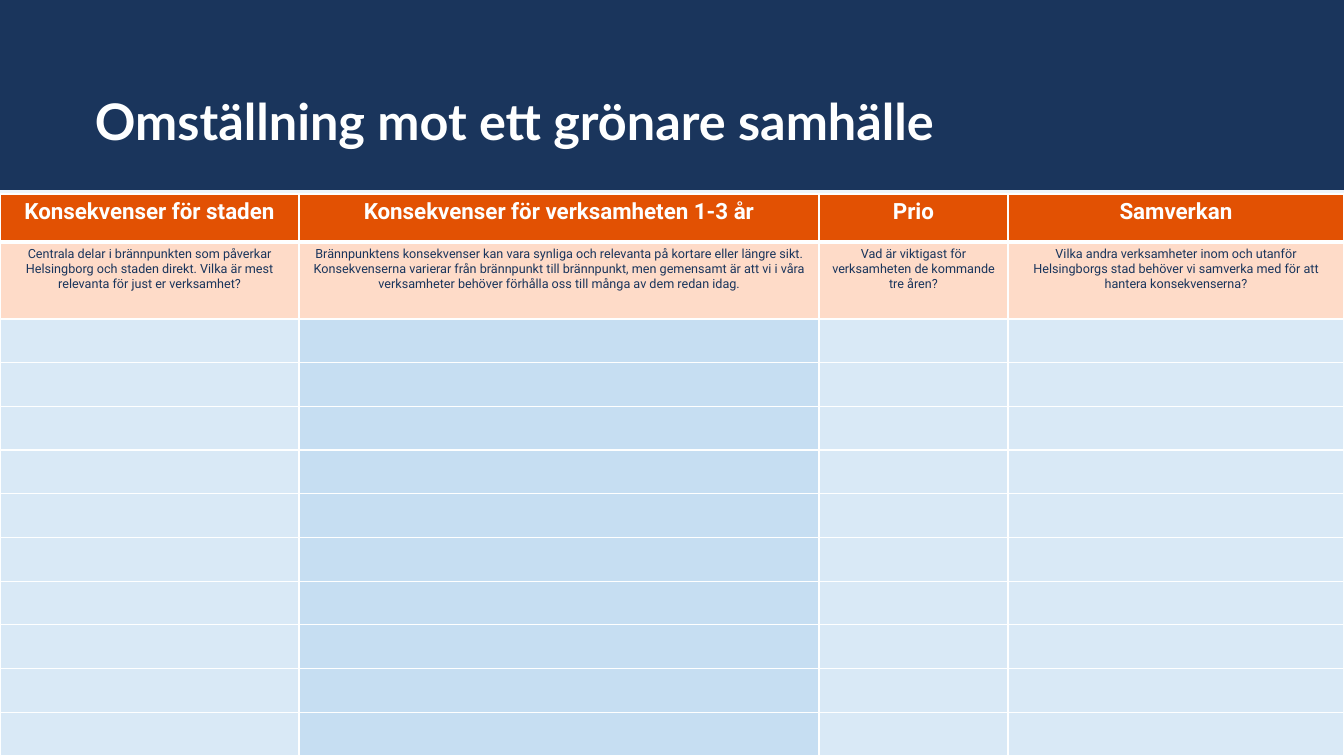
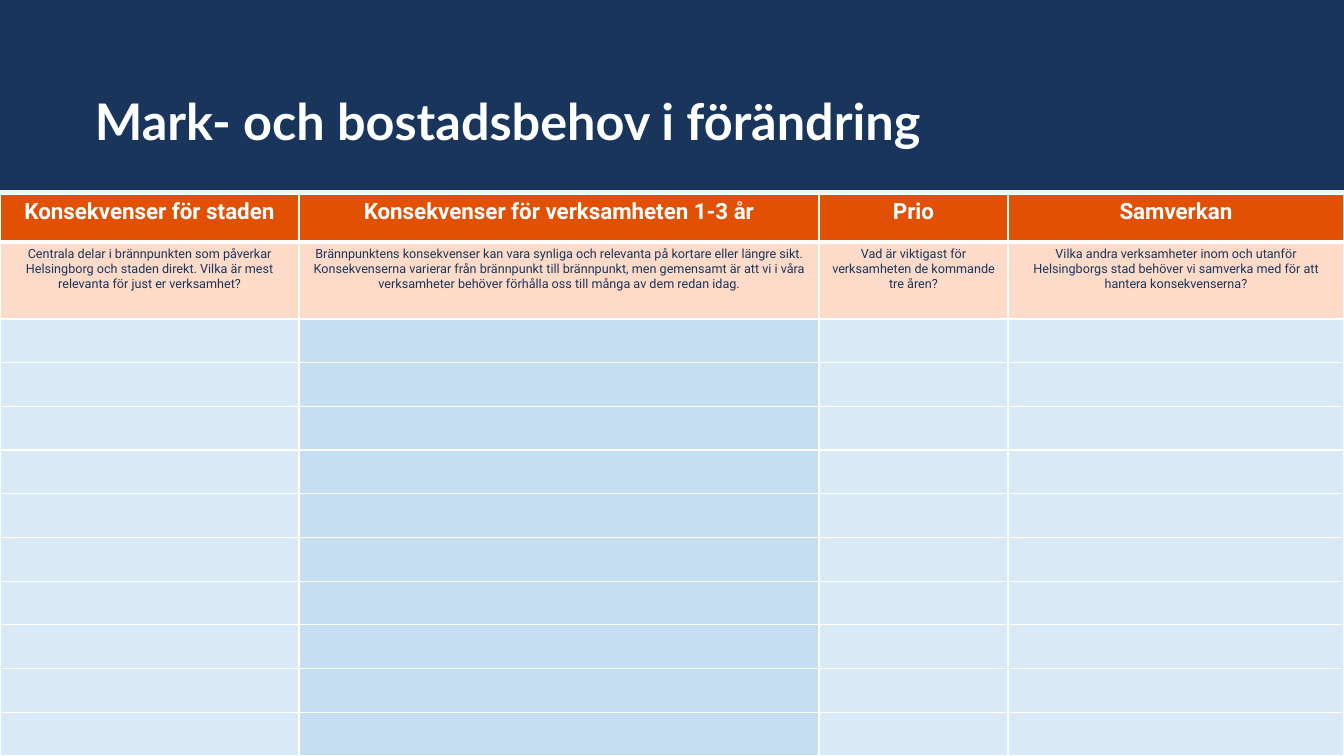
from lxml.etree import SubElement
from pptx import Presentation
from pptx.dml.color import RGBColor
from pptx.enum.shapes import MSO_SHAPE
from pptx.enum.text import MSO_ANCHOR, PP_ALIGN
from pptx.oxml.ns import qn
from pptx.util import Emu, Pt

WIDTH, HEIGHT = 1344, 756
SCALE = 12192000 / WIDTH
COLORS = {
    "background": "EEF5FB",
    "navy": "1A355C",
    "white": "FEFFFF",
    "orange": "E25103",
    "peach": "FEDBC8",
    "blue": "C6DEF2",
}
TITLES = ["Omställning mot ett grönare samhälle", "Mark- och bostadsbehov i förändring"]
# Column width, heading, guiding question
COLUMNS = [
    (299, "Konsekvenser för staden",
     "Centrala delar i brännpunkten som påverkar Helsingborg och staden direkt. "
     "Vilka är mest relevanta för just er verksamhet?"),
    (520, "Konsekvenser för verksamheten 1-3 år",
     "Brännpunktens konsekvenser kan vara synliga och relevanta på kortare eller längre sikt. "
     "Konsekvenserna varierar från brännpunkt till brännpunkt, men gemensamt är att vi i våra "
     "verksamheter behöver förhålla oss till många av dem redan idag."),
    (189, "Prio", "Vad är viktigast för verksamheten de kommande tre åren?"),
    (336, "Samverkan",
     "Vilka andra verksamheter inom och utanför Helsingborgs stad behöver vi samverka med "
     "för att hantera konsekvenserna?"),
]
TABLE_TOP, HEADING_HEIGHT, QUESTION_HEIGHT, ANSWER_ROWS = 194, 48, 77, 10
EMPHASIZED_COLUMN = 1
answer_height = (HEIGHT - TABLE_TOP - HEADING_HEIGHT - QUESTION_HEIGHT) / ANSWER_ROWS
row_heights = [HEADING_HEIGHT, QUESTION_HEIGHT] + [answer_height] * ANSWER_ROWS


def px(length):
    return Emu(round(length * SCALE))


def style_cell(cell, fill, top, bottom, alpha=None):
    """Give a cell white borders (top and bottom widths in points) and a fill."""
    properties = cell._tc.get_or_add_tcPr()
    for side, width in (("L", 1), ("R", 1), ("T", top), ("B", bottom)):
        line = SubElement(properties, qn(f"a:ln{side}"), w=str(Pt(width)))
        SubElement(SubElement(line, qn("a:solidFill")), qn("a:srgbClr"), val=COLORS["white"])
    cell.fill.solid()
    cell.fill.fore_color.rgb = RGBColor.from_string(COLORS[fill])
    if alpha:
        color = properties.find(qn("a:solidFill")).find(qn("a:srgbClr"))
        SubElement(color, qn("a:alpha"), val=str(alpha * 1000))


prs = Presentation()
prs.slide_width, prs.slide_height = px(WIDTH), px(HEIGHT)
background = prs.slide_master.background.fill
background.solid()
background.fore_color.rgb = RGBColor.from_string(COLORS["background"])

for title in TITLES:
    slide = prs.slides.add_slide(prs.slide_layouts[6])

    band = slide.shapes.add_shape(MSO_SHAPE.RECTANGLE, 0, 0, px(WIDTH), px(190))
    band.shadow.inherit = False
    band.fill.solid()
    band.fill.fore_color.rgb = RGBColor.from_string(COLORS["navy"])
    band.line.fill.background()

    heading = slide.shapes.add_textbox(px(95), px(24), px(1008), px(127)).text_frame
    heading.word_wrap = True
    heading.vertical_anchor = MSO_ANCHOR.BOTTOM
    heading.margin_left = heading.margin_right = heading.margin_top = heading.margin_bottom = 0
    heading.text = title
    paragraph = heading.paragraphs[0]
    paragraph.line_spacing = 0.9
    paragraph.font.name, paragraph.font.size, paragraph.font.bold = "Lato", Pt(36), True
    paragraph.font.color.rgb = RGBColor.from_string(COLORS["white"])

    worksheet = slide.shapes.add_table(
        len(row_heights), len(COLUMNS), 0, px(TABLE_TOP), px(WIDTH), px(HEIGHT - TABLE_TOP)
    ).table
    worksheet.first_row = worksheet.horz_banding = False
    for row, height in zip(worksheet.rows, row_heights):
        row.height = px(height)

    for col, (width, topic, question) in enumerate(COLUMNS):
        worksheet.columns[col].width = px(width)
        style_cell(worksheet.cell(0, col), "orange", top=1, bottom=3)
        style_cell(worksheet.cell(1, col), "peach", top=3, bottom=1)
        for row in range(2, len(row_heights)):
            alpha = None if col == EMPHASIZED_COLUMN else 50
            style_cell(worksheet.cell(row, col), "blue", top=1, bottom=1, alpha=alpha)

        for row, (text, size, color, bold) in enumerate(
            [(topic, 16, "white", True), (question, 9, "navy", False)]
        ):
            cell = worksheet.cell(row, col)
            cell.text = text
            paragraph = cell.text_frame.paragraphs[0]
            paragraph.alignment = PP_ALIGN.CENTER
            paragraph.font.name, paragraph.font.size, paragraph.font.bold = "Roboto", Pt(size), bold
            paragraph.font.color.rgb = RGBColor.from_string(COLORS[color])

prs.save("out.pptx")
